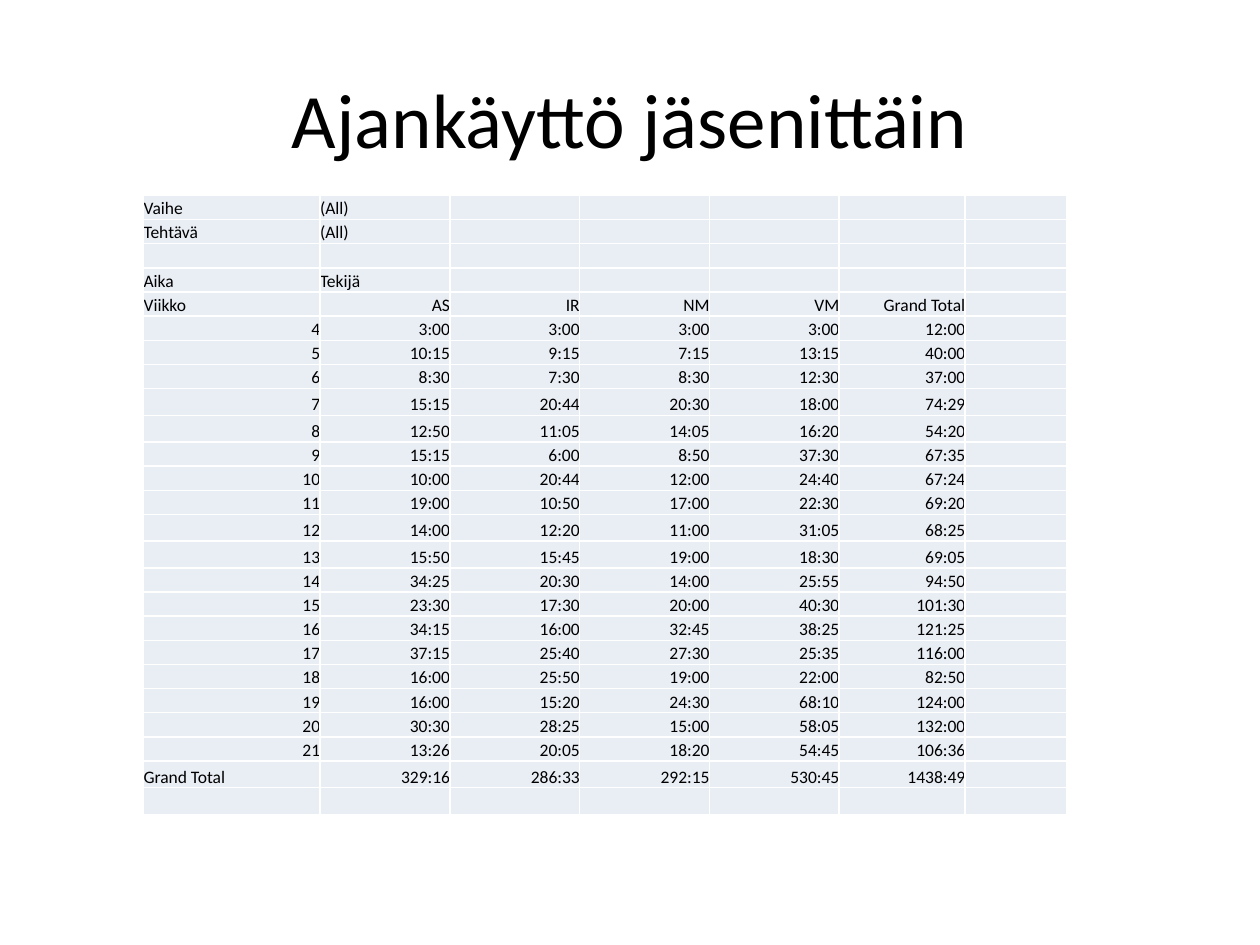
from lxml import etree
from pptx import Presentation
from pptx.dml.color import RGBColor
from pptx.enum.text import MSO_ANCHOR as Anchor, PP_ALIGN as Align
from pptx.oxml.ns import qn
from pptx.util import Inches, Pt

FONT = "Calibri"
BLACK, WHITE, PALE = "000000", "FFFFFF", "E9EDF4"
COL_WIDTHS = [1.4, 1.03, 1.03, 1.03, 1.03, 1, 0.81]
TALL_ROWS = {8, 9, 13, 14, 23, 24}
HEADER_ROW = 4

ROWS = [line.split("|") for line in """\
Vaihe|(All)
Tehtävä|(All)

Aika|Tekijä
Viikko|AS|IR|NM|VM|Grand Total
4|3:00|3:00|3:00|3:00|12:00
5|10:15|9:15|7:15|13:15|40:00
6|8:30|7:30|8:30|12:30|37:00
7|15:15|20:44|20:30|18:00|74:29
8|12:50|11:05|14:05|16:20|54:20
9|15:15|6:00|8:50|37:30|67:35
10|10:00|20:44|12:00|24:40|67:24
11|19:00|10:50|17:00|22:30|69:20
12|14:00|12:20|11:00|31:05|68:25
13|15:50|15:45|19:00|18:30|69:05
14|34:25|20:30|14:00|25:55|94:50
15|23:30|17:30|20:00|40:30|101:30
16|34:15|16:00|32:45|38:25|121:25
17|37:15|25:40|27:30|25:35|116:00
18|16:00|25:50|19:00|22:00|82:50
19|16:00|15:20|24:30|68:10|124:00
20|30:30|28:25|15:00|58:05|132:00
21|13:26|20:05|18:20|54:45|106:36
Grand Total|329:16|286:33|292:15|530:45|1438:49

""".splitlines()]


def rgb(color):
    return RGBColor.from_string(color)


def set_font(font, size):
    font.name, font.size = FONT, Pt(size)
    font.color.rgb = rgb(BLACK)


def add_title(slide, text, left, top, width, height):
    tf = slide.shapes.add_textbox(left, top, width, height).text_frame
    tf.word_wrap = True
    tf.vertical_anchor = Anchor.MIDDLE
    p = tf.paragraphs[0]
    p.text, p.alignment = text, Align.CENTER
    set_font(p.font, 44)


def add_borders(cell, color, width):
    tc_pr = cell._tc.get_or_add_tcPr()
    for side in ("a:lnL", "a:lnR", "a:lnT", "a:lnB"):
        ln = etree.SubElement(tc_pr, qn(side), w=str(Pt(width)))
        fill = etree.SubElement(ln, qn("a:solidFill"))
        etree.SubElement(fill, qn("a:srgbClr"), val=color)


def fill_cell(cell, text, align):
    add_borders(cell, WHITE, 1)
    cell.fill.solid()
    cell.fill.fore_color.rgb = rgb(PALE)
    cell.margin_left = cell.margin_right = cell.margin_top = cell.margin_bottom = 0
    cell.vertical_anchor = Anchor.BOTTOM
    p = cell.text_frame.paragraphs[0]
    p.alignment = align
    set_font(p.font, 10)
    if text:
        p.text = text
    else:  # an empty cell takes its line height from the end mark
        etree.SubElement(p._p, qn("a:endParaRPr"), sz="1000")


def add_hours_table(slide, left, top, width, height):
    table = slide.shapes.add_table(
        len(ROWS), len(COL_WIDTHS), left, top, width, height).table
    table.first_row = table.horz_banding = False
    for column, col_width in zip(table.columns, COL_WIDTHS):
        column.width = Inches(col_width)
    weights = [0.21 if i in TALL_ROWS else 0.19 for i in range(len(ROWS))]
    for i, (row, values) in enumerate(zip(table.rows, ROWS)):
        row.height = int(height * weights[i] / sum(weights))
        for j, cell in enumerate(row.cells):
            text = values[j] if j < len(values) else ""
            is_right = i >= HEADER_ROW and (j > 0 or text.isdigit())
            fill_cell(cell, text, Align.RIGHT if is_right else Align.LEFT)


def main():
    prs = Presentation()
    prs.slide_width, prs.slide_height = Inches(10), Inches(7.5)
    slide = prs.slides.add_slide(prs.slide_layouts[6])
    add_title(slide, "Ajankäyttö jäsenittäin",
              Inches(0.5), Inches(0.31), Inches(9), Inches(1.25))
    add_hours_table(slide, Inches(1.14), Inches(1.55), Inches(7.34), Inches(4.92))
    prs.save("out.pptx")


if __name__ == "__main__":
    main()
